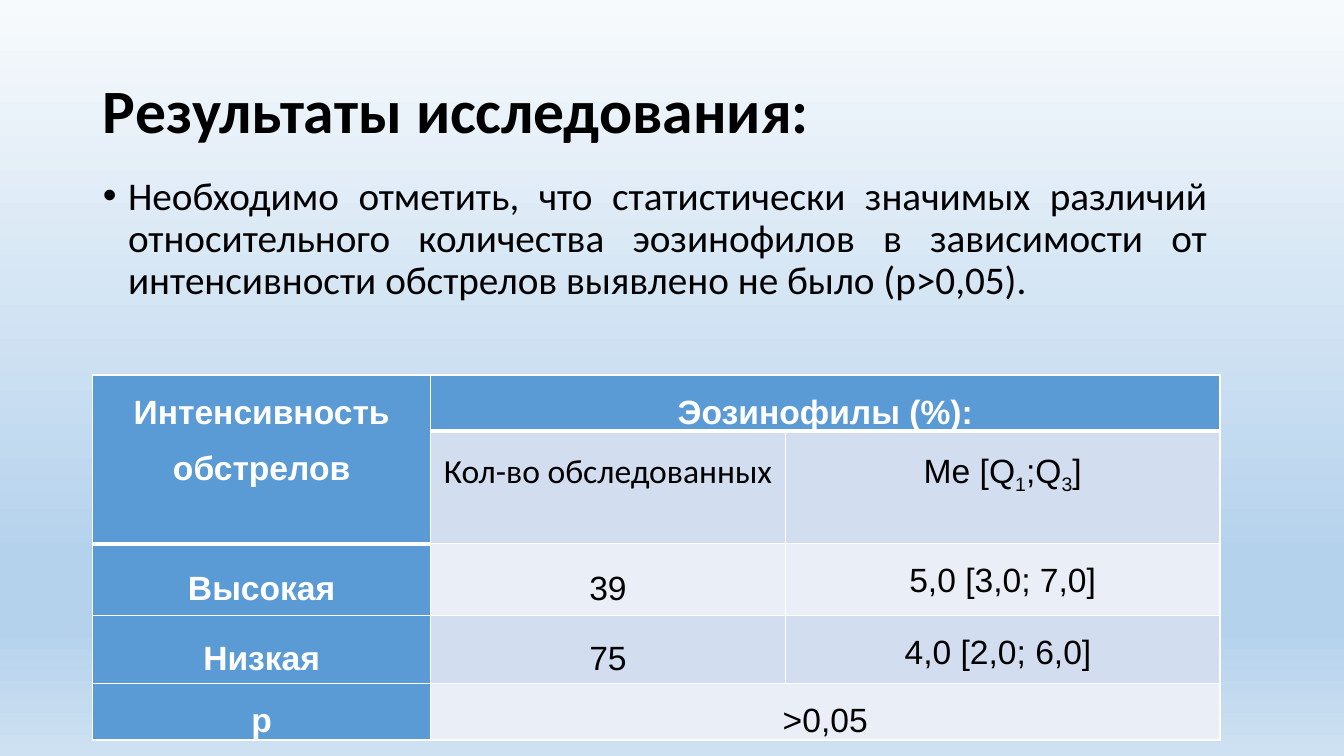
from lxml.etree import SubElement
from pptx import Presentation
from pptx.dml.color import RGBColor
from pptx.enum.text import MSO_ANCHOR as Anchor, MSO_AUTO_SIZE as AutoSize, PP_ALIGN as Align
from pptx.oxml.ns import qn
from pptx.util import Inches, Pt

COLORS = {
    "text": "000000", "white": "FFFFFF", "header": "5B9BD5",
    "band_dark": "D2DEEF", "band_light": "EAEFF7",
    "sky_top": "F7FAFD", "sky": "B5D2EC", "sky_bottom": "CEE1F2",
}
SKY_STOPS = [(0, "sky_top"), (74, "sky"), (83, "sky"), (100, "sky_bottom")]
COLUMN_WIDTHS = [3.35, 3.52, 4.31]
ROW_HEIGHTS = [0.34, 0.48, 0.71, 0.68, 0.13]
ROWS = [
    ["Интенсивность обстрелов", "Эозинофилы (%):", ""],
    ["", "Кол-во обследованных", [("Me [Q", 0), ("1", 1), (";Q", 0), ("3", 1), ("]", 0)]],
    ["Высокая", "39", "5,0 [3,0; 7,0]"],
    ["Низкая", "75", "4,0 [2,0; 6,0] "],
    ["р", ">0,05", ""],
]
MERGES = [((0, 0), (1, 0)), ((0, 1), (0, 2)), ((4, 1), (4, 2))]
THICK_BELOW = {(0, 0), (1, 0), (0, 1), (0, 2)}
MIDDLE = {(2, 0), (2, 1), (3, 0), (3, 1), (4, 0)}


class SlideBuilder:
    def __init__(self, presentation):
        self.width = presentation.slide_width
        self.height = presentation.slide_height
        self.slide = presentation.slides.add_slide(presentation.slide_layouts[1])

    def background(self, stops):
        fill = self.slide.background.fill
        fill.gradient()
        properties = self.slide.background._cSld.bg.bgPr
        gradient = properties.find(qn("a:gradFill"))
        for child in list(gradient):
            gradient.remove(child)
        stop_list = SubElement(gradient, qn("a:gsLst"))
        for position, color in stops:
            stop = SubElement(stop_list, qn("a:gs"), pos=str(position * 1000))
            SubElement(stop, qn("a:srgbClr"), val=COLORS[color])
        SubElement(gradient, qn("a:lin"), ang="5400000", scaled="0")

    def style(self, paragraph, size, color="text", bold=False, font="Calibri",
              align=Align.LEFT, spacing=0.9):
        paragraph.alignment = align
        paragraph.line_spacing = spacing
        paragraph.space_before = Pt(0)
        paragraph.font.name = font
        paragraph.font.size = Pt(size)
        paragraph.font.bold = bold
        paragraph.font.color.rgb = RGBColor.from_string(COLORS[color])

    def placeholder(self, index, text, left, top, width, height, anchor):
        shape = self.slide.placeholders[index]
        shape.left, shape.width = int(left * self.width), int(width * self.width)
        shape.top, shape.height = int(top * self.height), int(height * self.height)
        frame = shape.text_frame
        frame.text = text
        frame.word_wrap = True
        frame.auto_size = AutoSize.NONE
        frame.vertical_anchor = anchor
        return frame.paragraphs[0]

    def title(self, text, *box):
        self.style(self.placeholder(0, text, *box, Anchor.MIDDLE), 44, bold=True)

    def bullet(self, text, *box):
        paragraph = self.placeholder(1, text, *box, Anchor.TOP)
        properties = paragraph._p.get_or_add_pPr()
        properties.set("marL", str(Inches(0.25)))
        properties.set("indent", str(Inches(-0.25)))
        SubElement(properties, qn("a:buFont"), typeface="Arial")
        SubElement(properties, qn("a:buChar"), char="•")
        self.style(paragraph, 28, align=Align.JUSTIFY)

    def borders(self, cell, top, bottom):
        properties = cell._tc.get_or_add_tcPr()
        for side, width in (("L", 1), ("R", 1), ("T", top), ("B", bottom)):
            line = SubElement(properties, qn(f"a:ln{side}"), w=str(Pt(width)))
            fill = SubElement(line, qn("a:solidFill"))
            SubElement(fill, qn("a:srgbClr"), val=COLORS["white"])

    def cell(self, cell, content, row, column):
        header = row == 0 or column == 0
        band = "band_light" if row % 2 == 0 else "band_dark"
        cell.margin_left = cell.margin_right = cell.margin_top = cell.margin_bottom = 0
        cell.vertical_anchor = Anchor.MIDDLE if (row, column) in MIDDLE else Anchor.TOP
        self.borders(cell, 3 if (row - 1, column) in THICK_BELOW else 1,
                     3 if (row, column) in THICK_BELOW else 1)
        cell.fill.solid()
        cell.fill.fore_color.rgb = RGBColor.from_string(COLORS["header" if header else band])
        paragraph = cell.text_frame.paragraphs[0]
        self.style(paragraph, 24, "white" if header else "text", header,
                   "Calibri" if (row, column) == (1, 1) else "Arial", Align.CENTER, 1.5)
        parts = [(content, 0)] if isinstance(content, str) else content
        for text, subscript in parts:
            if text:
                run = paragraph.add_run()
                run.text = text
                if subscript:
                    run._r.get_or_add_rPr().set("baseline", "-25000")

    def table(self, rows, left, top):
        frame = self.slide.shapes.add_table(
            len(rows), len(COLUMN_WIDTHS), int(left * self.width), int(top * self.height),
            Inches(sum(COLUMN_WIDTHS)), Inches(sum(ROW_HEIGHTS)))
        table = frame.table
        table.first_row = table.horz_banding = False
        for column, width in zip(table.columns, COLUMN_WIDTHS):
            column.width = Inches(width)
        for row, height in zip(table.rows, ROW_HEIGHTS):
            row.height = Inches(height)
        for row, contents in enumerate(rows):
            for column, content in enumerate(contents):
                self.cell(table.cell(row, column), content, row, column)
        for first, last in MERGES:
            table.cell(*first).merge(table.cell(*last))


def main():
    presentation = Presentation()
    presentation.slide_width, presentation.slide_height = Inches(13.33), Inches(7.5)
    builder = SlideBuilder(presentation)
    builder.background(SKY_STOPS)
    left = 0.92 / 13.33
    builder.title("Результаты исследования:", left, 0.4 / 7.5, 11.5 / 13.33, 1.45 / 7.5)
    builder.bullet(
        "Необходимо отметить, что статистически значимых различий относительного количества "
        "эозинофилов в зависимости от интенсивности обстрелов выявлено не было (р>0,05).",
        left, 1.7 / 7.5, 11.15 / 13.33, 1.79 / 7.5)
    builder.table(ROWS, left, 3.72 / 7.5)
    presentation.save("out.pptx")


if __name__ == "__main__":
    main()
